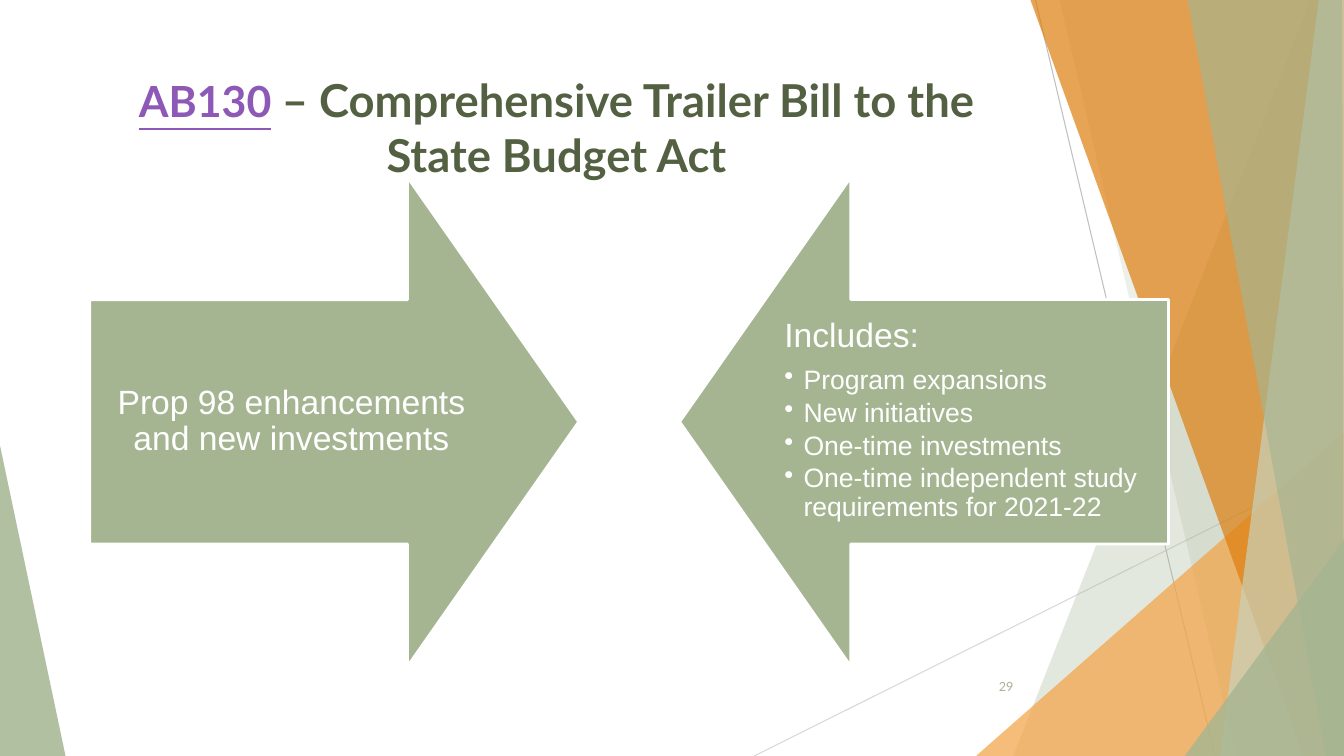
from lxml import etree
from pptx import Presentation
from pptx.dml.color import RGBColor
from pptx.enum.shapes import MSO_CONNECTOR as Connector, MSO_SHAPE as Preset
from pptx.enum.text import MSO_ANCHOR as Anchor, PP_ALIGN as Align
from pptx.oxml.ns import qn
from pptx.util import Inches, Pt

WIDTH, HEIGHT = 13.33, 7.5
SAGE = RGBColor(0xA5, 0xB5, 0x92)
PALE_SAGE = RGBColor(0xC8, 0xD2, 0xBC)
ORANGE = RGBColor(0xF3, 0xA4, 0x47)
DARK_ORANGE = RGBColor(0xDD, 0x7E, 0x0E)
LIGHT_GRAY = RGBColor(0xD8, 0xD8, 0xD8)
GRAY = RGBColor(0xBF, 0xBF, 0xBF)
PURPLE = RGBColor(0x8E, 0x58, 0xB6)
DARK_GREEN = RGBColor(0x53, 0x61, 0x42)
WHITE = RGBColor(0xFF, 0xFF, 0xFF)

# Corner points, colour and opacity in percent, from back to front
FACETS = [
    ([(0, 4.42), (0.65, HEIGHT), (0, HEIGHT)], SAGE, 85),
    ([(13, 0), (10.05, HEIGHT), (WIDTH, HEIGHT), (WIDTH, 0)], SAGE, 30),
    ([(10.51, 0), (12.26, HEIGHT), (WIDTH, HEIGHT), (WIDTH, 0)], SAGE, 20),
    ([(9.68, HEIGHT), (WIDTH, 4.29), (WIDTH, HEIGHT)], ORANGE, 72),
    ([(10.22, 0), (12.93, HEIGHT), (WIDTH, HEIGHT), (WIDTH, 0)], DARK_ORANGE, 70),
    ([(13.08, 0), (12.1, HEIGHT), (WIDTH, HEIGHT), (WIDTH, 0)], PALE_SAGE, 70),
    ([(11.78, 0), (13.15, HEIGHT), (WIDTH, HEIGHT), (13.31, 0)], SAGE, 65),
    ([(11.75, HEIGHT), (WIDTH, 5.35), (WIDTH, HEIGHT)], SAGE, 80),
]
BULLETS = [
    "Program expansions",
    "New initiatives",
    "One-time investments",
    "One-time independent study requirements for 2021-22",
]


def add_run(paragraph, text, size, color, font="Lato", bold=False, underline=False):
    run = paragraph.add_run()
    run.text = text
    run.font.name = font
    run.font.size = Pt(size)
    run.font.bold = bold
    run.font.underline = underline
    run.font.color.rgb = color


def add_frame(slide, box, inset=0.1, inset_y=0.05, anchor=Anchor.TOP):
    frame = slide.shapes.add_textbox(*map(Inches, box)).text_frame
    frame.word_wrap = True
    frame.vertical_anchor = anchor
    frame.margin_left = frame.margin_right = Inches(inset)
    frame.margin_top = frame.margin_bottom = Inches(inset_y)
    return frame


def add_facet(slide, points, color, opacity):
    corners = [(Inches(x), Inches(y)) for x, y in points]
    builder = slide.shapes.build_freeform(*corners[0], scale=1.0)
    builder.add_line_segments(corners[1:], close=True)
    shape = builder.convert_to_shape()
    shape.shadow.inherit = False
    shape.line.fill.background()
    shape.fill.solid()
    shape.fill.fore_color.rgb = color
    color_element = shape.fill._xPr.find(qn("a:solidFill"))[0]
    etree.SubElement(color_element, qn("a:alpha"), val=str(opacity * 1000))


def add_hairline(slide, start, end, color):
    line = slide.shapes.add_connector(Connector.STRAIGHT, *map(Inches, start + end))
    line.line.color.rgb = color
    line.line.width = Pt(0.75)
    etree.SubElement(line._element.spPr, qn("a:effectLst"))


def add_backdrop(slide):
    add_facet(slide, *FACETS[0])
    add_hairline(slide, (7.48, HEIGHT), (WIDTH, 4.58), LIGHT_GRAY)
    add_hairline(slide, (10.27, 0), (12.05, HEIGHT), GRAY)
    for facet in FACETS[1:]:
        add_facet(slide, *facet)


def add_title(slide, box):
    paragraph = add_frame(slide, box).paragraphs[0]
    paragraph.alignment = Align.CENTER
    add_run(paragraph, "AB130", 30.6, PURPLE, bold=True, underline=True)
    add_run(paragraph, " ", 30.6, DARK_GREEN, bold=True)
    add_run(paragraph, "– Comprehensive Trailer Bill to the State Budget Act",
            32.4, DARK_GREEN, bold=True)


def add_page_number(slide, box):
    paragraph = add_frame(slide, box, anchor=Anchor.MIDDLE).paragraphs[0]
    paragraph.alignment = Align.RIGHT
    add_run(paragraph, "29", 9, SAGE)


def add_arrow(slide, left, top, side, rotation, text_offset, anchor):
    """Place a sideways arrow in a square box and return the text frame on its shaft."""
    arrow = slide.shapes.add_shape(Preset.DOWN_ARROW, *map(Inches, (left, top, side, side)))
    arrow.rotation = rotation
    arrow.adjustments[0], arrow.adjustments[1] = 0.5, 0.35
    arrow.shadow.inherit = False
    arrow.fill.solid()
    arrow.fill.fore_color.rgb = SAGE
    arrow.line.color.rgb = WHITE
    arrow.line.width = Pt(2)
    shaft = (left + text_offset, top + side / 4, side - 0.85, side / 2)
    return add_frame(slide, shaft, 0.19, 0.19, anchor)


def write_paragraph(paragraph, text, size, space_after, alignment=Align.LEFT, bullet=False):
    paragraph.alignment = alignment
    paragraph.line_spacing = 0.9
    paragraph.space_after = Pt(space_after)
    if bullet:
        properties = paragraph._p.get_or_add_pPr()
        properties.set("marL", str(Inches(0.19)))
        properties.set("indent", str(-Inches(0.19)))
        properties.set("lvl", "1")
        etree.SubElement(properties, qn("a:buChar"), char="•")
    add_run(paragraph, text, size, WHITE, font="Arial")


def add_arrows(slide, left, top, side, pitch):
    # Right-pointing arrow
    frame = add_arrow(slide, left, top, side, 270, 0, Anchor.MIDDLE)
    write_paragraph(frame.paragraphs[0], "Prop 98 enhancements and new investments",
                    24, 8.4, Align.CENTER)
    # Left-pointing arrow with the list
    frame = add_arrow(slide, left + pitch, top, side, 90, 0.85, Anchor.TOP)
    write_paragraph(frame.paragraphs[0], "Includes:", 24, 8.4)
    for text in BULLETS:
        write_paragraph(frame.add_paragraph(), text, 19, 2.85, bullet=True)


def main():
    presentation = Presentation()
    presentation.slide_width = Inches(WIDTH)
    presentation.slide_height = Inches(HEIGHT)
    slide = presentation.slides.add_slide(presentation.slide_layouts[6])
    add_backdrop(slide)
    add_title(slide, (0.89, 0.67, 9.26, 1.44))
    add_page_number(slide, (9.4, 6.61, 0.75, 0.4))
    add_arrows(slide, left=0.89, top=1.76, side=4.85, pitch=5.85)
    presentation.save("out.pptx")


if __name__ == "__main__":
    main()
